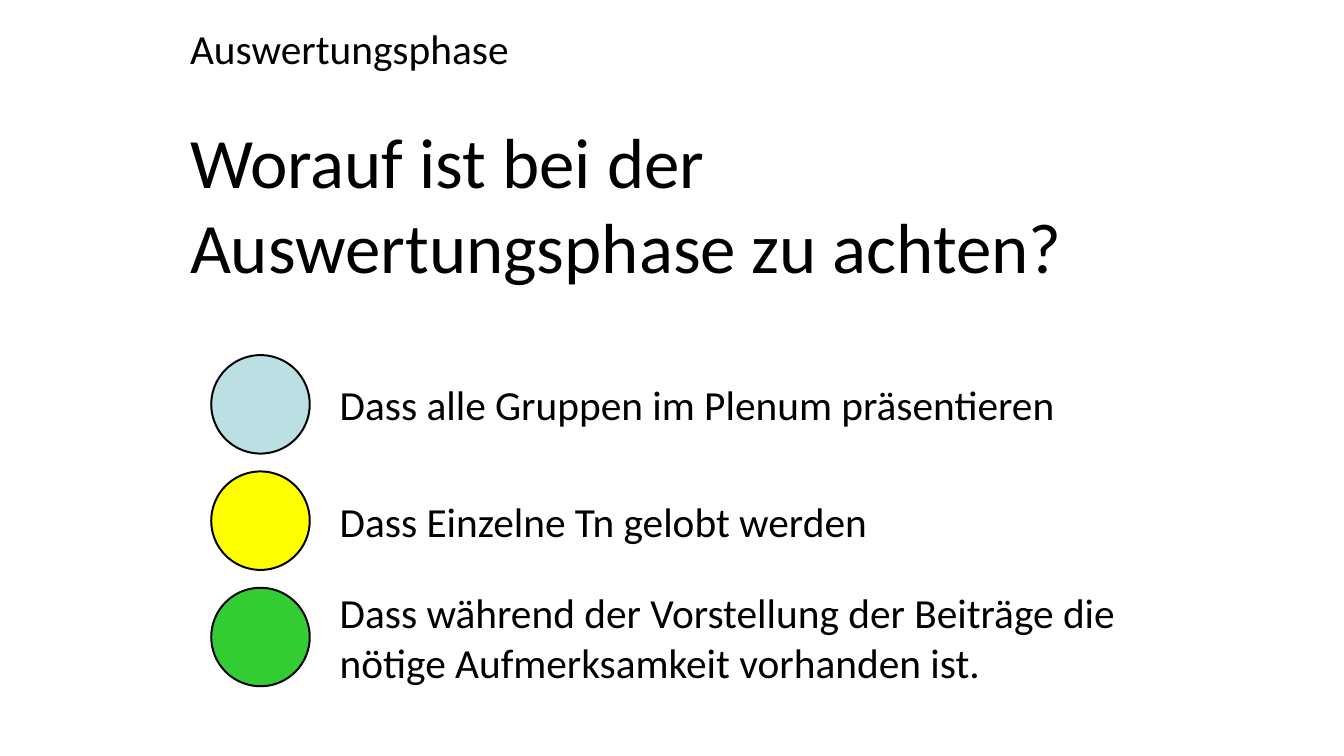
from dataclasses import dataclass

from pptx import Presentation
from pptx.dml.color import RGBColor
from pptx.enum.shapes import MSO_SHAPE as Preset
from pptx.enum.text import MSO_ANCHOR as Anchor
from pptx.enum.text import PP_ALIGN as Align
from pptx.slide import Slide
from pptx.util import Cm, Pt

COLOURS = {
    "ink": "000000",
    "paper": "FFFFFF",
    "blue": "BBE0E3",
    "yellow": "FFFF00",
    "green": "33CC33",
}

FRAME_FORMAT = {
    "word_wrap": True,
    "vertical_anchor": Anchor.MIDDLE,
    "margin_left": 0,
    "margin_top": 0,
    "margin_right": 0,
    "margin_bottom": 0,
}

HEADING_LEFT = 6.81
DOT_LEFT, DOT_TOP, DOT_SIZE = 7.57, 12.73, 3.53
ANSWER_LEFT, ANSWER_WIDTH, ANSWER_HEIGHT = 12.17, 29.41, 2.01
ANSWER_PITCH = 4.17


@dataclass(frozen=True)
class Caption:
    wording: str
    left: float
    top: float
    width: float
    height: float
    size: int


@dataclass(frozen=True)
class Answer:
    wording: str
    colour: str


HEADINGS = [
    Caption("Worauf ist bei der Auswertungsphase zu achten?",
            HEADING_LEFT, 4.19, 34.77, 6.15, 72),
    Caption("Auswertungsphase",
            HEADING_LEFT, 0.71, ANSWER_WIDTH, ANSWER_HEIGHT, 42),
]

ANSWERS = [
    Answer("Dass alle Gruppen im Plenum präsentieren", "blue"),
    Answer("Dass Einzelne Tn gelobt werden", "yellow"),
    Answer("Dass während der Vorstellung der Beiträge die "
           "nötige Aufmerksamkeit vorhanden ist.", "green"),
]


def rgb(name: str) -> RGBColor:
    return RGBColor.from_string(COLOURS[name])


def draw_caption(slide: Slide, caption: Caption) -> None:
    frame = slide.shapes.add_textbox(
        Cm(caption.left), Cm(caption.top), Cm(caption.width), Cm(caption.height)
    ).text_frame
    for attribute, value in FRAME_FORMAT.items():
        setattr(frame, attribute, value)
    paragraph = frame.paragraphs[0]
    paragraph.alignment = Align.LEFT
    run = paragraph.add_run()
    run.text = caption.wording
    font_format = {"name": "Calibri", "size": Pt(caption.size)}
    for attribute, value in font_format.items():
        setattr(run.font, attribute, value)
    run.font.color.rgb = rgb("ink")


def draw_answer(slide: Slide, answer: Answer, row: int) -> None:
    dot_top = DOT_TOP + row * ANSWER_PITCH
    dot = slide.shapes.add_shape(
        Preset.OVAL, Cm(DOT_LEFT), Cm(dot_top), Cm(DOT_SIZE), Cm(DOT_SIZE)
    )
    dot.shadow.inherit = False
    dot.fill.solid()
    dot.fill.fore_color.rgb = rgb(answer.colour)
    dot.line.color.rgb = rgb("ink")
    dot.line.width = Pt(2)
    answer_top = dot_top + (DOT_SIZE - ANSWER_HEIGHT) / 2
    draw_caption(slide, Caption(answer.wording, ANSWER_LEFT, answer_top,
                                ANSWER_WIDTH, ANSWER_HEIGHT, 42))


def main() -> None:
    deck = Presentation()
    deck.slide_width, deck.slide_height = Cm(48.16), Cm(27.1)
    slide = deck.slides.add_slide(deck.slide_layouts[6])
    slide.background.fill.solid()
    slide.background.fill.fore_color.rgb = rgb("paper")
    for heading in HEADINGS:
        draw_caption(slide, heading)
    for row, answer in enumerate(ANSWERS):
        draw_answer(slide, answer, row)
    deck.save("out.pptx")


if __name__ == "__main__":
    main()
